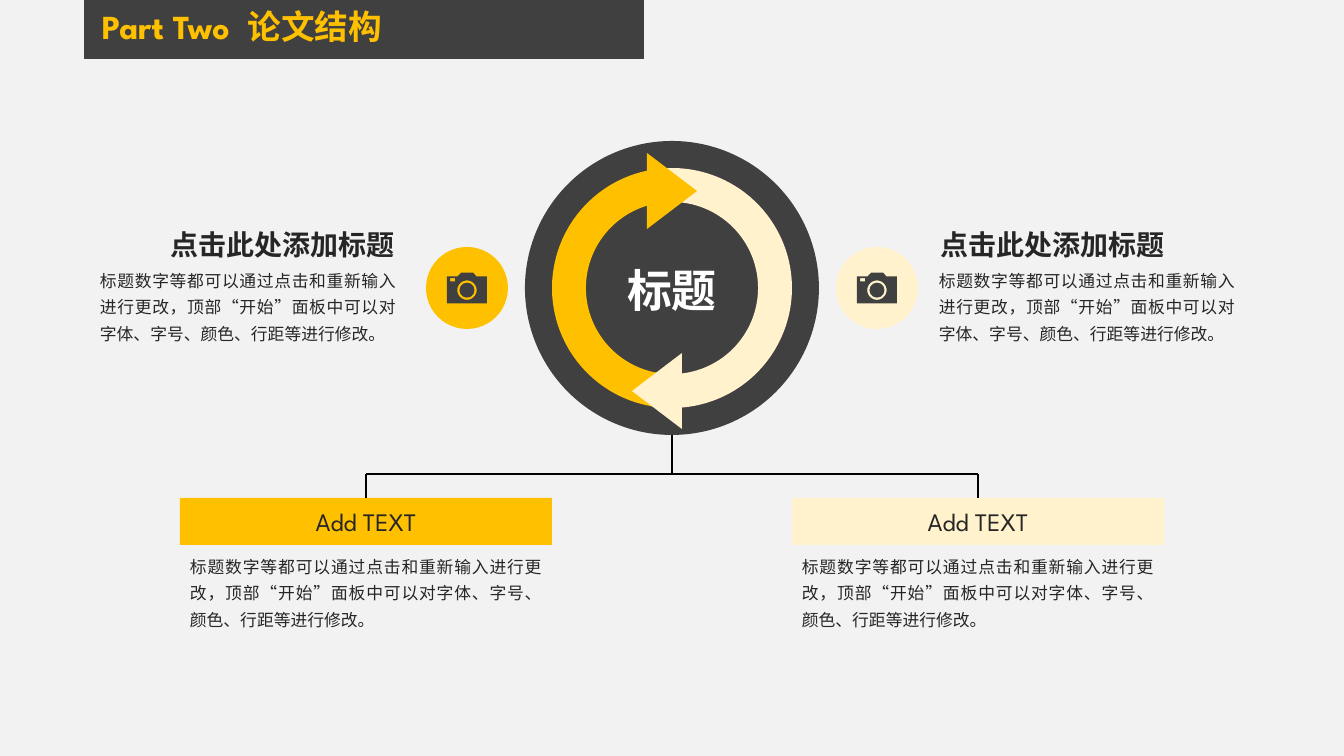
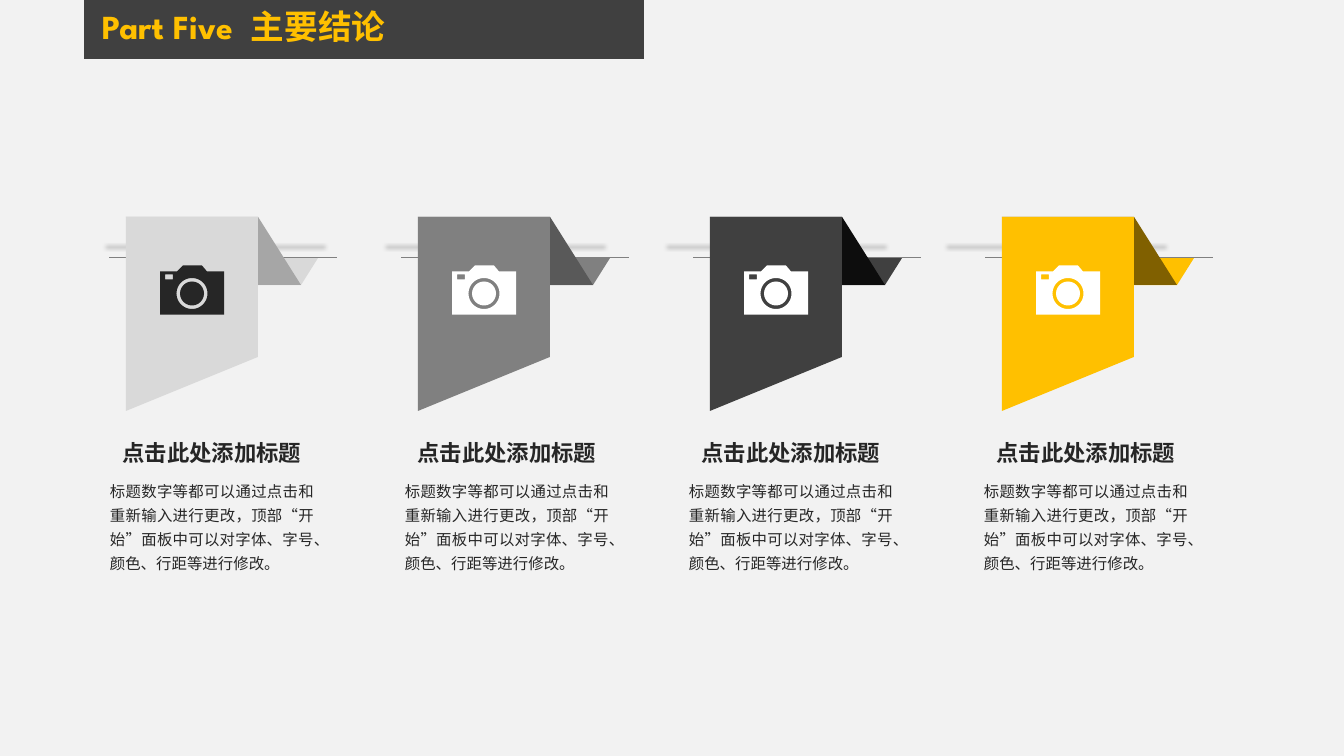
from math import cos, pi, sin
from lxml.etree import SubElement
from pptx import Presentation
from pptx.dml.color import RGBColor
from pptx.enum.shapes import MSO_CONNECTOR, MSO_SHAPE
from pptx.enum.text import MSO_ANCHOR, PP_ALIGN
from pptx.oxml.ns import qn
from pptx.util import Emu, Pt

PX = 914400 / 100.8
FONT = "League Spartan"
COLORS = {
    "paper": "F2F2F2", "dark": "404040", "ink": "262626", "gold": "FFC000",
    "cream": "FFF2CC", "white": "FFFFFF", "black": "000000", "silver": "D9D9D9",
    "silver_fold": "A6A6A6", "grey": "808080", "grey_fold": "595959",
    "dark_fold": "0D0D0D", "gold_fold": "806000",
}
HEADING = "点击此处添加标题"
BODY = "标题数字等都可以通过点击和重新输入进行更改，顶部“开始”面板中可以对字体、字号、颜色、行距等进行修改。"

CYCLE_TITLE = ("Part Two", "论文结构")
CYCLE_CENTER = (672, 288)
ARCS = [("cream", 265, 100), ("gold", 93, 264)]
ARROWHEADS = [("gold", 672, 191, 90), ("cream", 657, 391, 270)]
SIDES = [
    {"color": "cream", "icon": 877, "heading": 929, "body": 929},
    {"color": "gold", "icon": 467, "heading": 159, "body": 90},
]
BRANCHES = [("gold", 180, "Add TEXT"), ("cream", 792, "Add TEXT")]
BRANCH_WIDTH = 372
RAIL_TOP = 474
BRANCH_TOP = 498

FLAG_TITLE = ("Part Five", "主要结论")
FLAG_LEFT, FLAG_TOP, FLAG_STEP = 126, 217, 292
FLAGS = [
    {"face": "silver", "fold": "silver_fold", "icon": "ink", "text": 100},
    {"face": "grey", "fold": "grey_fold", "icon": "white", "text": 395},
    {"face": "dark", "fold": "dark_fold", "icon": "white", "text": 679},
    {"face": "gold", "fold": "gold_fold", "icon": "white", "text": 974},
]

CAMERA_SIZE = (64, 49)
CAMERA_BODY = [(47, 6), (42, 0), (23, 0), (17, 6), (0, 6), (0, 49), (64, 49), (64, 6)]
CAMERA_FLASH = [(5, 9), (5, 14), (13, 14), (13, 9)]
LENS_CENTER, LENS_HOLE, LENS_RADIUS = (32, 28), 15.5, 12

HEADING_STYLE = {"size": 16, "bold": True, "align": PP_ALIGN.CENTER}
BODY_STYLE = {"size": 11, "align": PP_ALIGN.JUSTIFY, "spacing": 1.3}


def emu(*lengths):
    return [Emu(round(length * PX)) for length in lengths]


def rgb(name):
    return RGBColor.from_string(COLORS[name])


def paint(shape, color):
    shape.shadow.inherit = False
    shape.fill.solid()
    shape.fill.fore_color.rgb = rgb(color)
    shape.line.fill.background()
    return shape


def add_block(page, kind, box, color, rotation=0):
    shape = paint(page.shapes.add_shape(kind, *emu(*box)), color)
    shape.rotation = rotation
    return shape


def add_disc(page, x, y, radius, color):
    return add_block(page, MSO_SHAPE.OVAL, (x - radius, y - radius, 2 * radius, 2 * radius), color)


def add_outline(page, contours, color):
    first, *others = [[emu(*point) for point in contour] for contour in contours]
    builder = page.shapes.build_freeform(*first[0], scale=1.0)
    builder.add_line_segments(first[1:], close=True)
    for contour in others:
        builder.move_to(*contour[0])
        builder.add_line_segments(contour[1:], close=True)
    return paint(builder.convert_to_shape(), color)


def write(frame, pieces, size, color="ink", bold=False, align=PP_ALIGN.LEFT,
          spacing=1.0, anchor=MSO_ANCHOR.TOP):
    frame.word_wrap = True
    frame.vertical_anchor = anchor
    para = frame.paragraphs[0]
    para.alignment = align
    para.line_spacing = spacing
    spans = []
    for piece in pieces:
        span = para.add_run()
        span.text = piece
        for name, value in {"name": FONT, "size": Pt(size), "bold": bold}.items():
            setattr(span.font, name, value)
        span.font.color.rgb = rgb(color)
        spans.append(span)
    return spans


def add_text(page, box, text, **style):
    write(page.shapes.add_textbox(*emu(*box)).text_frame, [text], **style)


def add_line(page, start, end, color, width):
    line = page.shapes.add_connector(MSO_CONNECTOR.STRAIGHT, *emu(*start, *end))
    line.line.color.rgb = rgb(color)
    line.line.width = Pt(width)
    effects = SubElement(line._element.spPr, qn("a:effectLst"))
    return line, effects


def add_camera(page, x, y, width, color):
    scale = width / CAMERA_SIZE[0]
    left, top = x - width / 2, y - CAMERA_SIZE[1] * scale / 2
    turns = [2 * pi * step / 48 for step in range(48)]
    hole = [(LENS_CENTER[0] + LENS_HOLE * cos(turn), LENS_CENTER[1] - LENS_HOLE * sin(turn))
            for turn in turns]
    contours = [[(left + px * scale, top + py * scale) for px, py in contour]
                for contour in (CAMERA_BODY, CAMERA_FLASH, hole)]
    add_outline(page, contours, color)
    add_disc(page, left + LENS_CENTER[0] * scale, top + LENS_CENTER[1] * scale,
             LENS_RADIUS * scale, color)


def add_page(deck, title):
    page = deck.slides.add_slide(deck.slide_layouts[6])
    add_block(page, MSO_SHAPE.RECTANGLE, (84, 0, 560, 59), "dark")
    box = page.shapes.add_textbox(*emu(92, 6, 378, 50))
    part, name = title
    spans = write(box.text_frame, [part, " ", name], 24, "gold", True, spacing=0.9)
    spans[1].font._element.set("spc", "650")
    return page


def build_cycle(deck):
    page = add_page(deck, CYCLE_TITLE)
    x, y = CYCLE_CENTER
    add_line(page, (x, y + 147), (x, RAIL_TOP), "black", 1)
    centers = [left + BRANCH_WIDTH / 2 for _, left, _ in BRANCHES]
    add_line(page, (centers[0], RAIL_TOP), (centers[-1], RAIL_TOP), "black", 1)

    add_disc(page, x, y, 147, "dark")
    for color, start, end in ARCS:
        arc = page.shapes.add_shape(MSO_SHAPE.ARC, *emu(x - 103, y - 103, 206, 206))
        arc.shadow.inherit = False
        arc.adjustments[0], arc.adjustments[1] = start * 0.6, end * 0.6
        arc.fill.background()
        arc.line.color.rgb = rgb(color)
        arc.line.width = Pt(24.25)
    for color, tip_x, tip_y, rotation in ARROWHEADS:
        add_block(page, MSO_SHAPE.ISOSCELES_TRIANGLE, (tip_x - 38, tip_y - 25, 76, 50),
                  color, rotation)
    add_text(page, (x - 60, 258, 120, 64), "标题", size=32, color="white", bold=True,
             align=PP_ALIGN.CENTER)

    for side in SIDES:
        add_disc(page, side["icon"], y, 41, side["color"])
        add_camera(page, side["icon"], y, 40, "dark")
        add_text(page, (side["heading"], 223, 247, 44), HEADING, **{**HEADING_STYLE, "size": 20})
        add_text(page, (side["body"], 260, 316, 90), BODY, **{**BODY_STYLE, "size": 12})

    for center, (color, left, label) in zip(centers, BRANCHES):
        bar = add_block(page, MSO_SHAPE.RECTANGLE, (left, BRANCH_TOP, BRANCH_WIDTH, 47), color)
        write(bar.text_frame, [label], 18, align=PP_ALIGN.CENTER, anchor=MSO_ANCHOR.MIDDLE)
        drop, _ = add_line(page, (center, RAIL_TOP), (center, BRANCH_TOP), "black", 1)
        drop.end_connect(bar, 0)
        add_text(page, (left, 546, BRANCH_WIDTH, 90), BODY, **{**BODY_STYLE, "size": 12})


def build_flags(deck):
    page = add_page(deck, FLAG_TITLE)
    top = FLAG_TOP
    for index, flag in enumerate(FLAGS):
        left = FLAG_LEFT + index * FLAG_STEP
        _, effects = add_line(page, (left + 211, 257), (left - 17, 257), "grey", 0.5)
        shadow = SubElement(effects, qn("a:outerShdw"), blurRad="38100", dist="12700", dir="0",
                            sx="96000", sy="96000", algn="ctr", rotWithShape="0")
        tint = SubElement(shadow, qn("a:srgbClr"), val=COLORS["black"])
        SubElement(tint, qn("a:alpha"), val="95000")

        tail = add_block(page, MSO_SHAPE.TRAPEZOID, (left + 32, 258, 160, 27), flag["face"], 180)
        tail.adjustments[0] = 0.63
        fold = add_block(page, MSO_SHAPE.PARALLELOGRAM, (left, top, 175, 68), flag["fold"])
        fold.adjustments[0] = 0.63
        fold._element.spPr.get_or_add_xfrm().set("flipV", "1")
        add_outline(page, [[(left, top), (left + 132, top), (left + 132, top + 140),
                            (left, top + 194)]], flag["face"])
        add_camera(page, left + 66, 290, 64, flag["icon"])
        add_text(page, (flag["text"], 434, 224, 37), HEADING, **HEADING_STYLE)
        add_text(page, (flag["text"], 472, 224, 107), BODY, **BODY_STYLE)


def main():
    deck = Presentation()
    deck.slide_width, deck.slide_height = emu(1344, 756)
    backdrop = deck.slide_master.background.fill
    backdrop.solid()
    backdrop.fore_color.rgb = rgb("paper")
    build_cycle(deck)
    build_flags(deck)
    deck.save("out.pptx")


if __name__ == "__main__":
    main()
